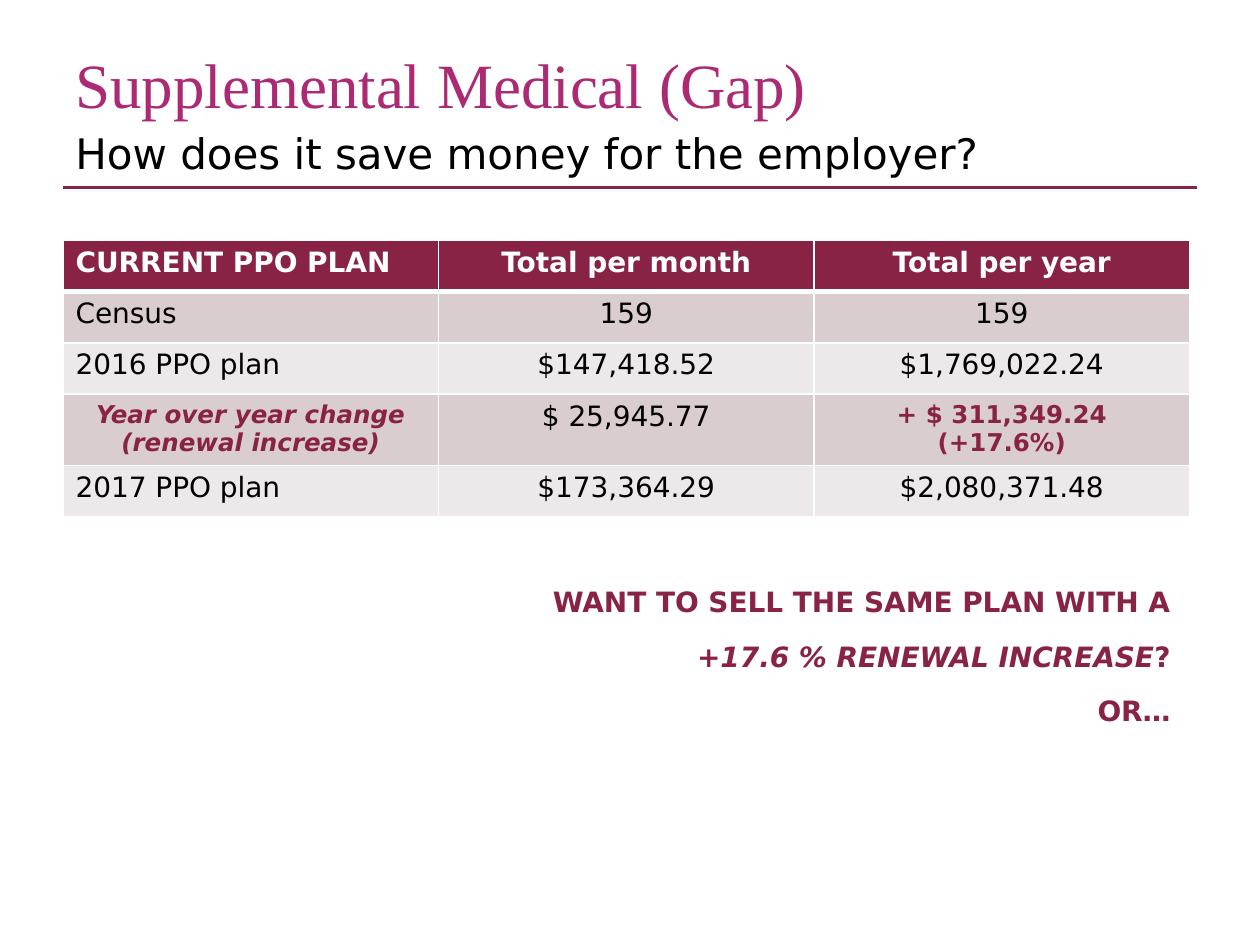
from lxml.etree import SubElement
from pptx import Presentation
from pptx.dml.color import RGBColor
from pptx.enum.shapes import MSO_CONNECTOR
from pptx.enum.text import MSO_ANCHOR, PP_ALIGN
from pptx.oxml.ns import qn
from pptx.util import Cm, Pt

HUES = {
    "wine": "882345", "pink": "AC2973", "black": "000000", "white": "FFFFFF",
    "dark": "DACDCF", "light": "EDE8E9",
}
LEFT, WIDE = 1.27, 22.86


def hue(name):
    return RGBColor.from_string(HUES[name])


def write(frame, lines, size=16, color="black", bold=False, slant=False,
          face="DejaVu Sans", align=PP_ALIGN.LEFT, gap=0):
    """Fill a frame; a line is a string or a list of (text, slant) runs."""
    for i, line in enumerate(lines):
        para = frame.add_paragraph() if i else frame.paragraphs[0]
        para.alignment = align
        para.space_before = Pt(gap if i else 0)
        para.space_after = Pt(gap)
        for text, lean in [(line, slant)] if isinstance(line, str) else line:
            run = para.add_run()
            run.text = text
            font = run.font
            font.name, font.size = face, Pt(size)
            font.bold, font.italic = bold, lean
            font.color.rgb = hue(color)


class Deck:
    """Holds the style and the current slide."""

    def __init__(self):
        self.show = Presentation()
        self.show.slide_width, self.show.slide_height = Cm(25.4), Cm(19.05)
        self.slide = self.show.slides.add_slide(self.show.slide_layouts[6])

    def text(self, x, y, w, h, lines, anchor=MSO_ANCHOR.MIDDLE, **style):
        frame = self.slide.shapes.add_textbox(Cm(x), Cm(y), Cm(w), Cm(h)).text_frame
        frame.word_wrap = True
        frame.vertical_anchor = anchor
        write(frame, lines, **style)

    def rule(self, x, y, w):
        line = self.slide.shapes.add_connector(
            MSO_CONNECTOR.STRAIGHT, Cm(x), Cm(y), Cm(x + w), Cm(y))
        line.line.color.rgb = hue("wine")
        line.line.width = Pt(2)
        SubElement(line._element.spPr, qn("a:effectLst"))

    def edge(self, cell, sides):
        props = cell._tc.get_or_add_tcPr()
        for side, width in sides.items():
            line = SubElement(props, qn(f"a:ln{side}"), w=str(Pt(width)))
            fill = SubElement(line, qn("a:solidFill"))
            SubElement(fill, qn("a:srgbClr"), val=HUES["white"])

    def table(self, x, y, w, high, rows, special):
        grid = self.slide.shapes.add_table(
            len(rows), len(rows[0]), Cm(x), Cm(y), Cm(w), Cm(high * len(rows))).table
        for r, row in enumerate(rows):
            for c, text in enumerate(row):
                cell = grid.cell(r, c)
                top = 3 if r == 1 else 1
                base = 3 if r == 0 else 1
                self.edge(cell, {"L": 1, "R": 1, "T": top, "B": base})
                cell.fill.solid()
                shade = "dark" if r % 2 else "light"
                cell.fill.fore_color.rgb = hue(shade if r else "wine")
                style = {"align": PP_ALIGN.CENTER if c else PP_ALIGN.LEFT}
                if r == 0:
                    style.update(color="white", bold=True)
                style.update(special.get((r, c), {}))
                write(cell.text_frame, text.split("\n"), **style)

    def save(self):
        self.show.save("out.pptx")


def main():
    deck = Deck()
    deck.rule(LEFT, 3.78, WIDE)
    deck.text(LEFT, 0.76, WIDE, 1.83, ["Supplemental Medical (Gap)"],
              size=36, color="pink", face="Times New Roman")
    deck.text(LEFT, 2.59, WIDE, 0.97, ["How does it save money for the employer?"],
              size=24)
    rows = [
        ("CURRENT PPO PLAN", "Total per month", "Total per year"),
        ("Census", "159", "159"),
        ("2016 PPO plan", "$147,418.52", "$1,769,022.24"),
        ("Year over year change\n(renewal increase)", "$ 25,945.77",
         "+ $ 311,349.24\n(+17.6%)"),
        ("2017 PPO plan", "$173,364.29", "$2,080,371.48"),
    ]
    change = {"size": 14, "color": "wine", "bold": True, "align": PP_ALIGN.CENTER}
    deck.table(LEFT, 4.85, 22.71, 1.03, rows,
               {(3, 0): {**change, "slant": True}, (3, 2): change})
    deck.text(10.16, 11.66, 13.69, 3.18,
              ["WANT TO SELL THE SAME PLAN WITH A",
               [("+17.6 % RENEWAL INCREASE", True), ("?", False)],
               "OR…"],
              anchor=MSO_ANCHOR.TOP, color="wine", bold=True,
              align=PP_ALIGN.RIGHT, gap=6)
    deck.save()


if __name__ == "__main__":
    main()
